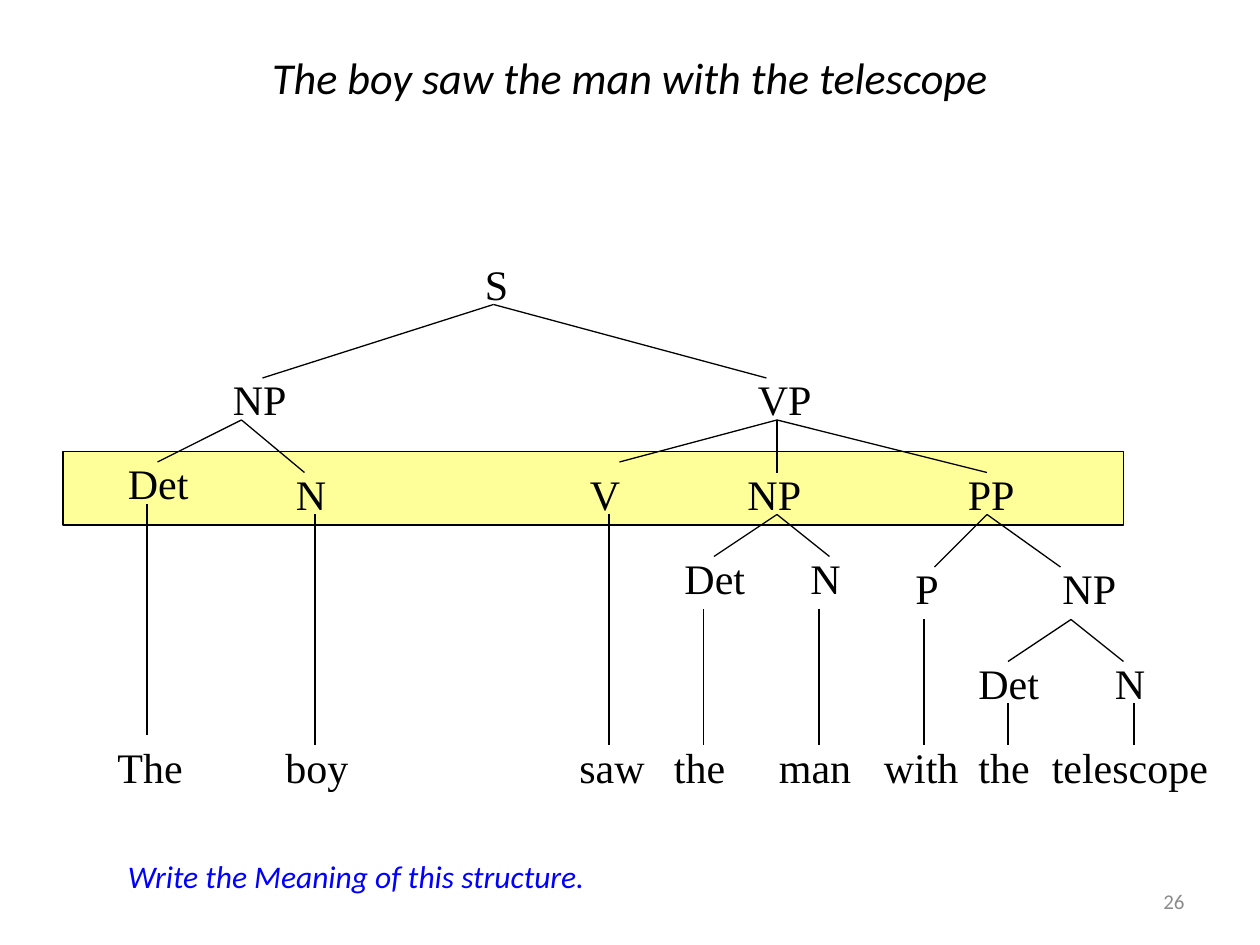
from lxml import etree
from pptx import Presentation
from pptx.dml.color import RGBColor
from pptx.enum.shapes import MSO_CONNECTOR, MSO_SHAPE
from pptx.enum.text import MSO_ANCHOR, PP_ALIGN
from pptx.oxml.ns import qn
from pptx.util import Inches, Pt

STRAIGHT, RECT = MSO_CONNECTOR.STRAIGHT, MSO_SHAPE.RECTANGLE
TOP, MIDDLE = MSO_ANCHOR.TOP, MSO_ANCHOR.MIDDLE
LEFT, CENTER, RIGHT = PP_ALIGN.LEFT, PP_ALIGN.CENTER, PP_ALIGN.RIGHT

COLORS = {"ink": "000000", "band": "FFFF99", "task": "0000FF", "number": "8C8C8C"}
SANS, SERIF = "Calibri", "Times New Roman"
LINE_WIDTH = 0.75

# All positions are in grid units, twelve to the inch.
UNITS_PER_INCH = 12
LABEL_HEIGHT = 6
WORD_ROW, STEM_END = 70, 71

TITLE = "The boy saw the man with the telescope"
TASK = "Write the Meaning of this structure."
PAGE_NUMBER = "26"
BAND = (6, 43, 101, 7)

# label, left, top, width
NODES = [
    ("S", 45, 24, 5),
    ("NP", 21, 35, 9), ("VP", 71, 35, 9),
    ("Det", 11, 43, 9), ("N", 27, 44, 5),
    ("V", 55, 44, 8), ("NP", 70, 44, 9), ("PP", 91, 44, 7),
    ("Det", 64, 52, 9), ("N", 76, 52, 5),
    ("P", 86, 53, 7), ("NP", 100, 53, 10),
    ("Det", 92, 62, 9), ("N", 105, 62, 5),
]

# word, left, width, stem x, stem top, stem bottom
WORDS = [
    ("The", 10, 9, 14, 48, WORD_ROW),
    ("boy", 26, 11, 30, 49, STEM_END),
    ("saw", 54, 10, 58, 49, STEM_END),
    ("the", 63, 9, 67, 58, STEM_END),
    ("man", 73, 10, 78, 58, STEM_END),
    ("with", 83, 10, 88, 59, STEM_END),
    ("the", 92, 9, 96, 67, STEM_END),
    ("telescope", 99, 18, 108, 67, STEM_END),
]

# apex, ends of its branches
BRANCHES = [
    ((47, 29), [(25, 36), (73, 36)]),
    ((23, 40), [(15, 44), (29, 45)]),
    ((74, 40), [(59, 44), (74, 45), (94, 45)]),
    ((74, 49), [(68, 53), (79, 53)]),
    ((94, 49), [(89, 54), (101, 54)]),
    ((102, 59), [(96, 63), (107, 63)]),
]


def grid(*units):
    return [Inches(u / UNITS_PER_INCH) for u in units]


def color(name):
    return RGBColor.from_string(COLORS[name])


def add_text(slide, text, box, size=24, font=SERIF, ink="ink", italic=False,
             align=LEFT, anchor=TOP, line_spacing=None):
    tf = slide.shapes.add_textbox(*grid(*box)).text_frame
    tf.word_wrap = True
    tf.vertical_anchor = anchor
    p = tf.paragraphs[0]
    p.text = text
    p.alignment = align
    p.line_spacing = line_spacing
    f = p.runs[0].font
    f.name, f.size, f.italic = font, Pt(size), italic
    f.color.rgb = color(ink)


def add_line(slide, start, end):
    line = slide.shapes.add_connector(STRAIGHT, *grid(*start, *end))
    line.line.color.rgb = color("ink")
    line.line.width = Pt(LINE_WIDTH)
    etree.SubElement(line._element.spPr, qn("a:effectLst"))


def add_band(slide):
    sp = slide.shapes.add_shape(RECT, *grid(*BAND))
    sp.shadow.inherit = False
    sp.fill.solid()
    sp.fill.fore_color.rgb = color("band")
    sp.line.color.rgb = color("ink")
    sp.line.width = Pt(LINE_WIDTH)


def main():
    prs = Presentation()
    prs.slide_width, prs.slide_height = Inches(10), Inches(7.5)
    slide = prs.slides.add_slide(prs.slide_layouts[6])

    add_band(slide)
    add_text(slide, TITLE, (6, 3.6, 108, 5.4), 25.2, SANS, italic=True,
             align=CENTER, anchor=MIDDLE, line_spacing=1.4)
    for apex, ends in BRANCHES:
        for end in ends:
            add_line(slide, apex, end)
    for label, left, top, width in NODES:
        add_text(slide, label, (left, top, width, LABEL_HEIGHT))
    for word, left, width, x, top, bottom in WORDS:
        add_line(slide, (x, top), (x, bottom))
        add_text(slide, word, (left, WORD_ROW, width, LABEL_HEIGHT))
    add_text(slide, TASK, (11, 81, 89, 4.8), 18, SANS, "task", italic=True)
    add_text(slide, PAGE_NUMBER, (86, 83.4, 28, 4.8), 12, SANS, "number",
             align=RIGHT, anchor=MIDDLE)

    prs.save("out.pptx")


if __name__ == "__main__":
    main()
